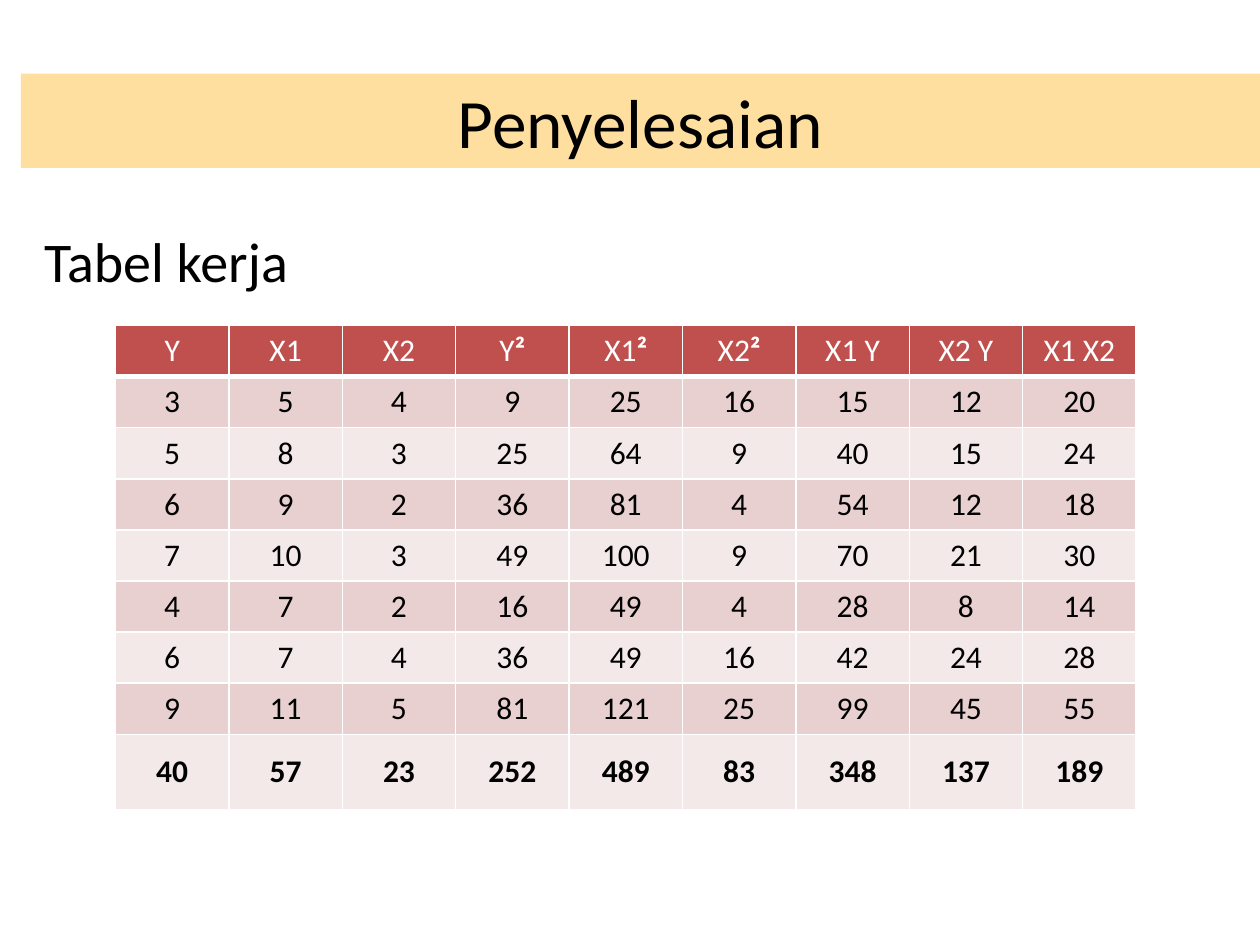
import pptx
import pptx.dml.color
import pptx.enum.text
import pptx.oxml
import pptx.oxml.ns
import pptx.util

COLORS = {
    "banner": "FFDF9F",
    "header": "C0504D",
    "odd": "E8D0D0",
    "even": "F4E9E9",
    "ink": "000000",
    "white": "FFFFFF",
}
CELL = pptx.util.Inches(1) // 12  # the slide is a grid of 120 columns by 90 rows

HEADINGS = ["Y", "X1", "X2", "Y²", "X1²", "X2²", "X1 Y", "X2 Y", "X1 X2"]
OBSERVATIONS = [(3, 5, 4), (5, 8, 3), (6, 9, 2), (7, 10, 3), (4, 7, 2), (6, 7, 4), (9, 11, 5)]


def rgb(name):
    return pptx.dml.color.RGBColor.from_string(COLORS[name])


def set_fill(fill, name):
    fill.solid()
    fill.fore_color.rgb = rgb(name)


def grid_box(left, top, width, height):
    return [round(length * CELL) for length in (left, top, width, height)]


def place(placeholder, box):
    for side, length in zip(("left", "top", "width", "height"), box):
        setattr(placeholder, side, length)


def write(paragraph, text, size, color, bold=False):
    run = paragraph.add_run()
    run.text = text
    run.font.color.rgb = rgb(color)
    font_format = {"name": "Calibri", "size": pptx.util.Pt(size), "bold": bold}
    for attribute, value in font_format.items():
        setattr(run.font, attribute, value)


def fill_title(title, box):
    place(title, box)
    set_fill(title.fill, "banner")
    frame = title.text_frame
    frame.vertical_anchor = pptx.enum.text.MSO_ANCHOR.MIDDLE
    frame.auto_size = pptx.enum.text.MSO_AUTO_SIZE.NONE
    frame.paragraphs[0].alignment = pptx.enum.text.PP_ALIGN.CENTER
    write(frame.paragraphs[0], "Penyelesaian", 39.6, "ink")


def fill_caption(body, box):
    place(body, box)
    frame = body.text_frame
    frame.auto_size = pptx.enum.text.MSO_AUTO_SIZE.NONE
    frame.margin_right = 0
    caption = frame.paragraphs[0]
    write(caption, "Tabel kerja", 32, "ink")
    properties = caption._p.get_or_add_pPr()
    indent = pptx.util.Inches(0.38)
    properties.set("marL", str(indent))
    properties.set("indent", str(-indent))
    pptx.oxml.ns.qn("a:buNone")
    properties.append(pptx.oxml.parse_xml(
        f'<a:buNone {pptx.oxml.ns.nsdecls("a")}/>'))


def work_rows():
    """Return the observations with their squares and products, then the column sums."""
    rows = [(y, x1, x2, y * y, x1 * x1, x2 * x2, x1 * y, x2 * y, x1 * x2)
            for y, x1, x2 in OBSERVATIONS]
    return rows + [tuple(sum(column) for column in zip(*rows))]


def add_borders(cell, bottom):
    widths = {"lnL": 1, "lnR": 1, "lnT": 1, "lnB": bottom}
    for side, points in widths.items():
        cell._tc.get_or_add_tcPr().append(pptx.oxml.parse_xml(
            f'<a:{side} {pptx.oxml.ns.nsdecls("a")} w="{pptx.util.Pt(points)}">'
            f'<a:solidFill><a:srgbClr val="{COLORS["white"]}"/></a:solidFill></a:{side}>'))


def add_work_table(slide, box):
    rows = [HEADINGS] + work_rows()
    last = len(rows) - 1
    table = slide.shapes.add_table(len(rows), len(HEADINGS), *box).table
    sum_height = pptx.util.Inches(0.6)
    for row in table.rows:
        row.height = (box[3] - sum_height) // last
    table.rows[last].height = sum_height

    for r, values in enumerate(rows):
        is_header = r == 0
        fill = "header" if is_header else "odd" if r % 2 else "even"
        color = "white" if is_header else "ink"
        for c, value in enumerate(values):
            cell = table.cell(r, c)
            add_borders(cell, bottom=3 if is_header else 1)
            set_fill(cell.fill, fill)
            cell.vertical_anchor = pptx.enum.text.MSO_ANCHOR.MIDDLE
            paragraph = cell.text_frame.paragraphs[0]
            paragraph.alignment = pptx.enum.text.PP_ALIGN.CENTER
            base, square, _ = str(value).partition("²")
            write(paragraph, base, 18, color, bold=r == last)
            if square:
                write(paragraph, square, 18, color, bold=True)


def main():
    deck = pptx.Presentation()
    deck.slide_width = 120 * CELL
    deck.slide_height = 90 * CELL
    slide = deck.slides.add_slide(deck.slide_layouts[1])
    fill_title(slide.shapes.title, grid_box(2, 7, 118, 9))
    fill_caption(slide.placeholders[1], grid_box(3, 21, 26, 7))
    add_work_table(slide, grid_box(11, 31, 97.2, 46))
    deck.save("out.pptx")


if __name__ == "__main__":
    main()
